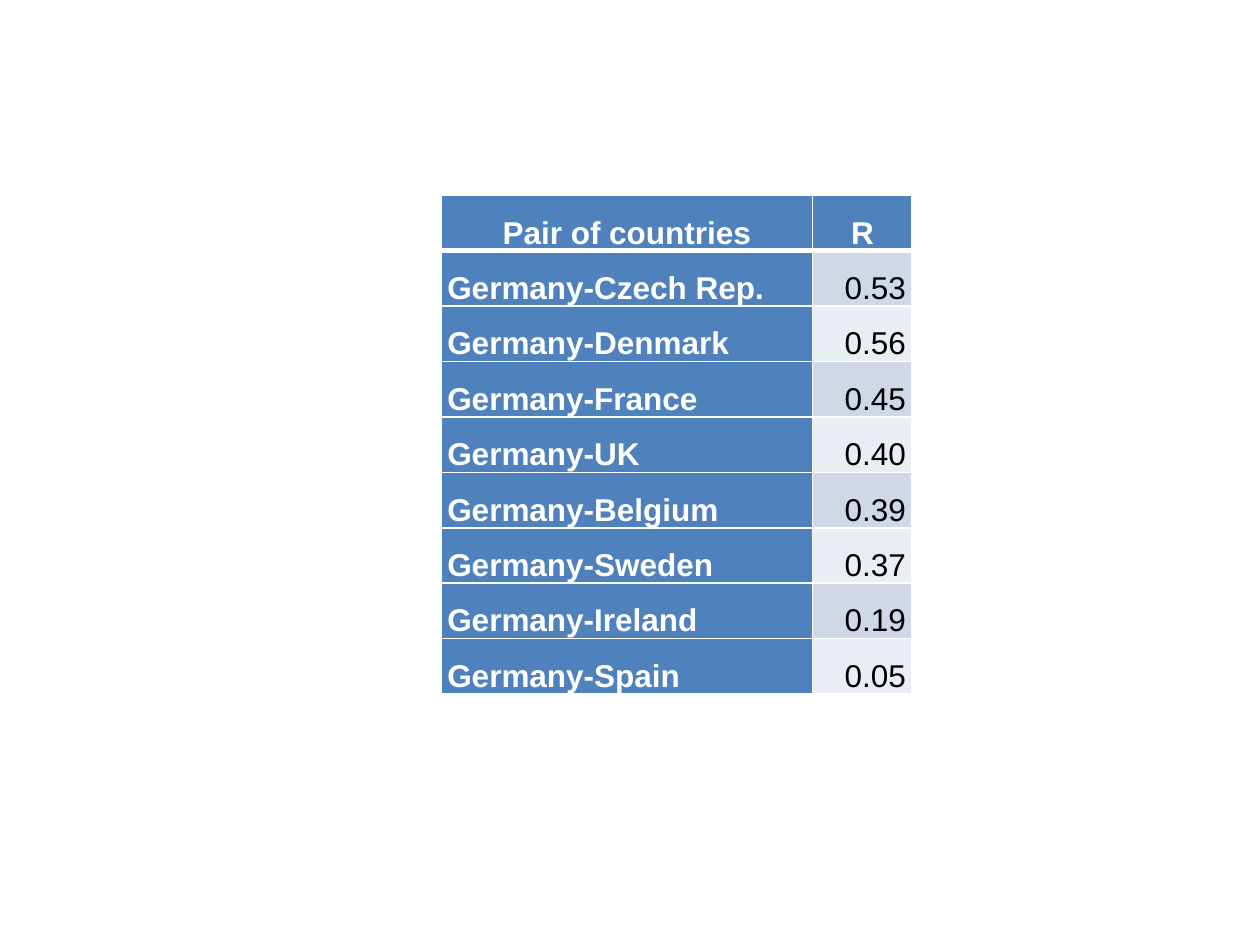
import pptx
import pptx.util
import pptx.dml.color
import pptx.enum.text
import pptx.oxml.ns
import lxml.etree
from pptx.util import Inches

WHITE = pptx.dml.color.RGBColor(0xFF, 0xFF, 0xFF)
BLACK = pptx.dml.color.RGBColor(0x00, 0x00, 0x00)
BLUE = pptx.dml.color.RGBColor(0x4F, 0x81, 0xBD)
BANDS = (pptx.dml.color.RGBColor(0xD0, 0xD8, 0xE8),
         pptx.dml.color.RGBColor(0xE9, 0xED, 0xF4))
ALIGN = pptx.enum.text.PP_ALIGN

CORRELATIONS = [
    ("Pair of countries", "R"),
    ("Germany-Czech Rep.", "0.53"),
    ("Germany-Denmark", "0.56"),
    ("Germany-France", "0.45"),
    ("Germany-UK", "0.40"),
    ("Germany-Belgium", "0.39"),
    ("Germany-Sweden", "0.37"),
    ("Germany-Ireland", "0.19"),
    ("Germany-Spain", "0.05"),
]
CELL_FORMAT = {
    "margin_left": Inches(0.05),
    "margin_right": Inches(0.05),
    "margin_top": 0,
    "margin_bottom": 0,
    "vertical_anchor": pptx.enum.text.MSO_ANCHOR.BOTTOM,
}


def add_border(cell, side, points):
    """Draw a solid white line on one side of a cell."""
    properties = cell._tc.get_or_add_tcPr()
    qn = pptx.oxml.ns.qn
    line = lxml.etree.SubElement(properties, qn(f"a:ln{side}"),
                                 w=str(pptx.util.Pt(points)))
    solid = lxml.etree.SubElement(line, qn("a:solidFill"))
    lxml.etree.SubElement(solid, qn("a:srgbClr"), val=str(WHITE))


presentation = pptx.Presentation()
presentation.slide_width = Inches(10)
presentation.slide_height = Inches(7.5)
slide = presentation.slides.add_slide(presentation.slide_layouts[6])

# Table grid
row_height = Inches(0.44)
correlations = slide.shapes.add_table(
    len(CORRELATIONS), 2, Inches(3.5), Inches(1.55),
    Inches(3.74), row_height * len(CORRELATIONS)).table
for column, width in zip(correlations.columns, (2.95, 0.79)):
    column.width = Inches(width)
for row in correlations.rows:
    row.height = row_height

# Cells: blue header row and first column, banded values
for row_index, entries in enumerate(CORRELATIONS):
    for column_index, entry in enumerate(entries):
        cell = correlations.cell(row_index, column_index)
        is_header = row_index == 0
        is_value = not is_header and column_index == 1

        for name, value in CELL_FORMAT.items():
            setattr(cell, name, value)

        # A thick rule separates the header from the body
        borders = {"L": 1, "R": 1, "T": 3 if row_index == 1 else 1,
                   "B": 3 if is_header else 1}
        for side, points in borders.items():
            add_border(cell, side, points)

        cell.fill.solid()
        cell.fill.fore_color.rgb = BANDS[(row_index - 1) % 2] if is_value else BLUE

        cell.text = entry
        paragraph = cell.text_frame.paragraphs[0]
        paragraph.line_spacing = 1.15
        paragraph.alignment = (ALIGN.CENTER if is_header
                               else ALIGN.RIGHT if is_value else ALIGN.LEFT)
        font = paragraph.runs[0].font
        font_format = {"name": "Arial", "size": pptx.util.Pt(18),
                       "bold": not is_value}
        for name, value in font_format.items():
            setattr(font, name, value)
        font.color.rgb = BLACK if is_value else WHITE

presentation.save("out.pptx")
